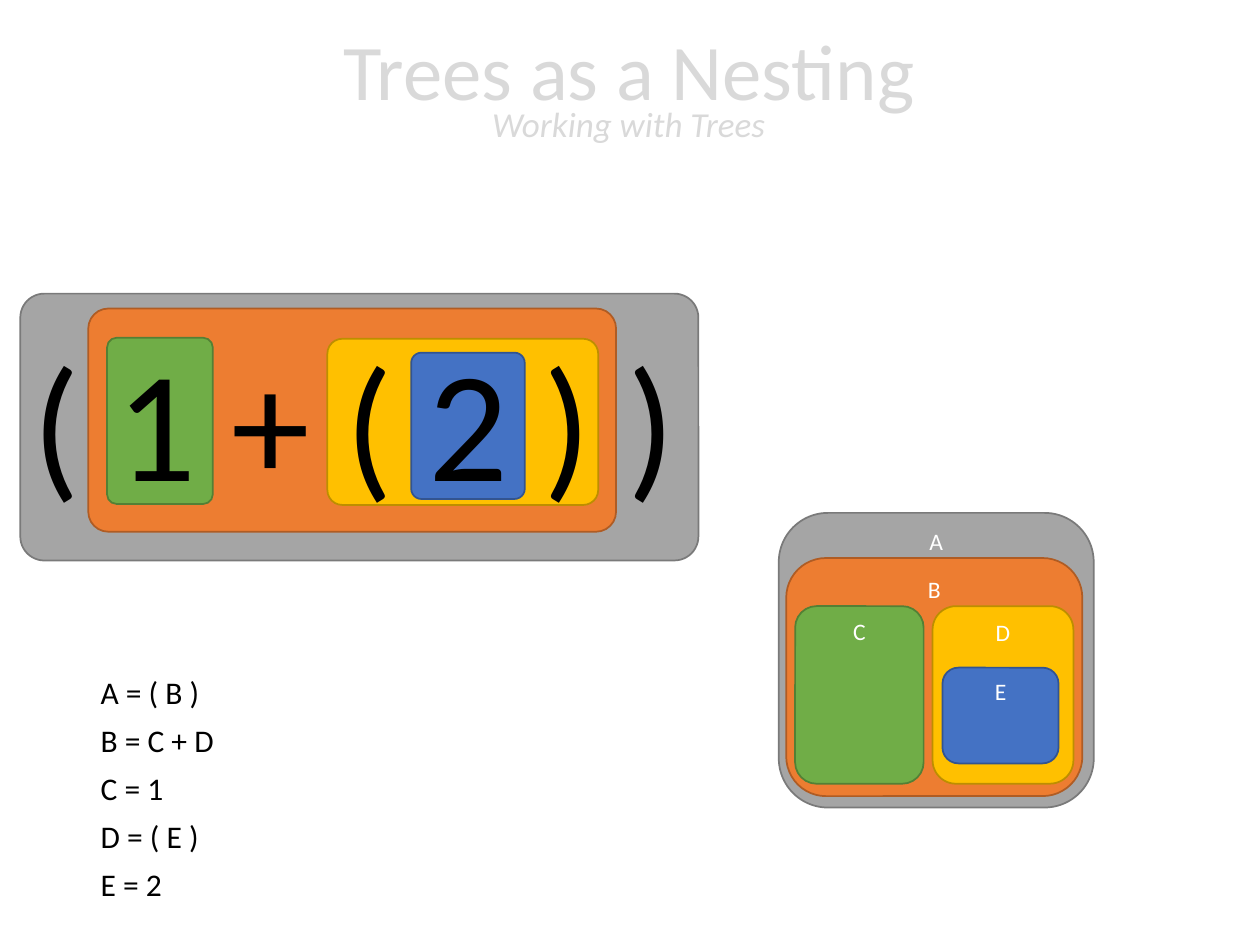
import pptx
import pptx.dml.color
import pptx.enum.shapes
import pptx.enum.text
import pptx.util

Cm = pptx.util.Cm
Pt = pptx.util.Pt
RGBColor = pptx.dml.color.RGBColor
Anchor = pptx.enum.text.MSO_ANCHOR
Align = pptx.enum.text.PP_ALIGN

FONT = "Calibri"
BLACK = RGBColor(0x00, 0x00, 0x00)
WHITE = RGBColor(0xFF, 0xFF, 0xFF)
TITLE_GRAY = RGBColor(0xD9, 0xD9, 0xD9)

# Fill and outline of each tree node
NODE_COLORS = {
    "A": (RGBColor(0xA5, 0xA5, 0xA5), RGBColor(0x7A, 0x7A, 0x7A)),
    "B": (RGBColor(0xED, 0x7D, 0x31), RGBColor(0xAF, 0x5C, 0x24)),
    "C": (RGBColor(0x70, 0xAD, 0x47), RGBColor(0x53, 0x80, 0x35)),
    "D": (RGBColor(0xFF, 0xC0, 0x00), RGBColor(0xBD, 0x8E, 0x00)),
    "E": (RGBColor(0x44, 0x72, 0xC4), RGBColor(0x32, 0x54, 0x91)),
}

# Left, top, width, height in centimetres, outermost node first
EXPRESSION_BOXES = {
    "A": (0.41, 5.92, 13.67, 5.38),
    "B": (1.78, 6.22, 10.64, 4.5),
    "C": (2.16, 6.81, 2.13, 3.35),
    "D": (6.6, 6.83, 5.46, 3.35),
    "E": (8.29, 7.11, 2.29, 2.95),
}
NESTED_BOXES = {
    "A": (15.7, 10.34, 6.35, 5.94),
    "B": (15.85, 11.25, 5.97, 4.8),
    "C": (16.03, 12.22, 2.59, 3.58),
    "D": (18.8, 12.22, 2.84, 3.58),
    "E": (19, 13.46, 2.34, 1.93),
}

# Grammar rules and the widths of their boxes
RULES = [
    ("A = ( B )", 2.54),
    ("B = C + D", 2.82),
    ("C = 1", 1.8),
    ("D = ( E )", 2.51),
    ("E = 2", 1.75),
]
RULE_LEFT, RULE_TOP, RULE_PITCH, RULE_HEIGHT = 1.78, 13.44, 0.97, 1.02


def set_font(paragraph, size, color):
    paragraph.font.name = FONT
    paragraph.font.size = Pt(size)
    paragraph.font.color.rgb = color


def add_node(slide, node, box):
    shape = slide.shapes.add_shape(
        pptx.enum.shapes.MSO_SHAPE.ROUNDED_RECTANGLE, *map(Cm, box))
    fill, line = NODE_COLORS[node]
    shape.shadow.inherit = False
    shape.fill.solid()
    shape.fill.fore_color.rgb = fill
    shape.line.color.rgb = line
    shape.line.width = Pt(1)
    return shape


def add_labelled_node(slide, node, box):
    frame = add_node(slide, node, box).text_frame
    frame.vertical_anchor = Anchor.TOP
    frame.margin_left = frame.margin_right = Cm(0.18)
    frame.margin_top = Cm(0 if node == "A" else 0.1)
    frame.margin_bottom = Cm(0.1)
    paragraph = frame.paragraphs[0]
    paragraph.text = node
    paragraph.alignment = Align.CENTER
    set_font(paragraph, 13.5, WHITE)


def add_text(slide, text, box, size):
    frame = slide.shapes.add_textbox(*map(Cm, box)).text_frame
    frame.word_wrap = False
    frame.auto_size = pptx.enum.text.MSO_AUTO_SIZE.SHAPE_TO_FIT_TEXT
    paragraph = frame.paragraphs[0]
    paragraph.text = text
    set_font(paragraph, size, BLACK)


def add_title(slide, title, subtitle):
    box = slide.shapes.add_textbox(Cm(1.27), Cm(0.08), Cm(22.81), Cm(3.68))
    frame = box.text_frame
    frame.word_wrap = True
    frame.vertical_anchor = Anchor.MIDDLE
    paragraph = frame.paragraphs[0]
    paragraph.alignment = Align.CENTER
    paragraph.line_spacing = 0.7
    for text, size, italic in ((title, 45, False), (subtitle, 20, True)):
        if paragraph.runs:
            paragraph.add_line_break()
        run = paragraph.add_run()
        run.text = text
        run.font.italic = italic
        set_font(run, size, TITLE_GRAY)


def main():
    presentation = pptx.Presentation()
    presentation.slide_width = Cm(25.4)
    presentation.slide_height = Cm(19.05)
    slide = presentation.slides.add_slide(presentation.slide_layouts[6])

    add_title(slide, "Trees as a Nesting", "Working with Trees")

    # Nested boxes with node names
    for node, box in NESTED_BOXES.items():
        add_labelled_node(slide, node, box)

    # Expression over its coloured parts
    for node, box in EXPRESSION_BOXES.items():
        add_node(slide, node, box).adjustments[0] = 0.09
    add_text(slide, "( 1 + ( 2 ) )", (0.41, 6.4, 13.59, 4.11), 90)

    # Grammar rules
    for row, (rule, width) in enumerate(RULES):
        top = RULE_TOP + row * RULE_PITCH
        add_text(slide, rule, (RULE_LEFT, top, width, RULE_HEIGHT), 18)

    presentation.save("out.pptx")


if __name__ == "__main__":
    main()
